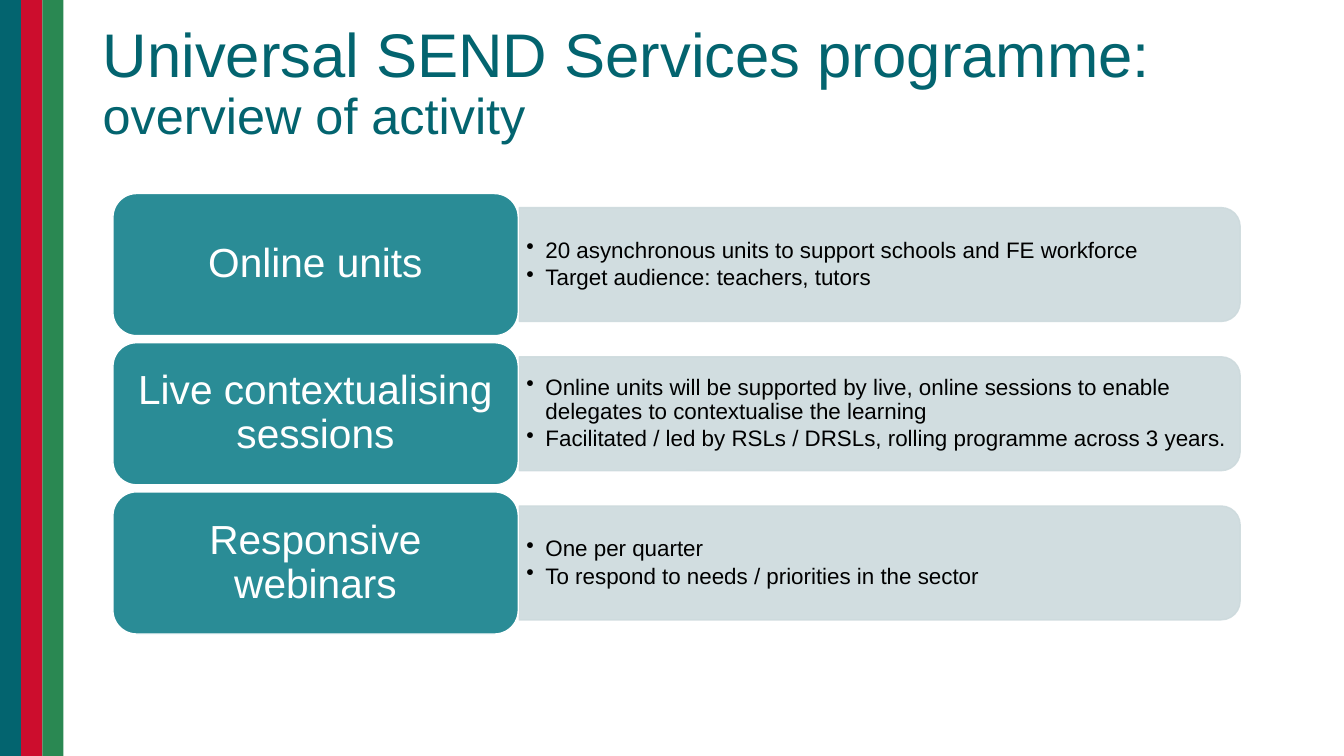
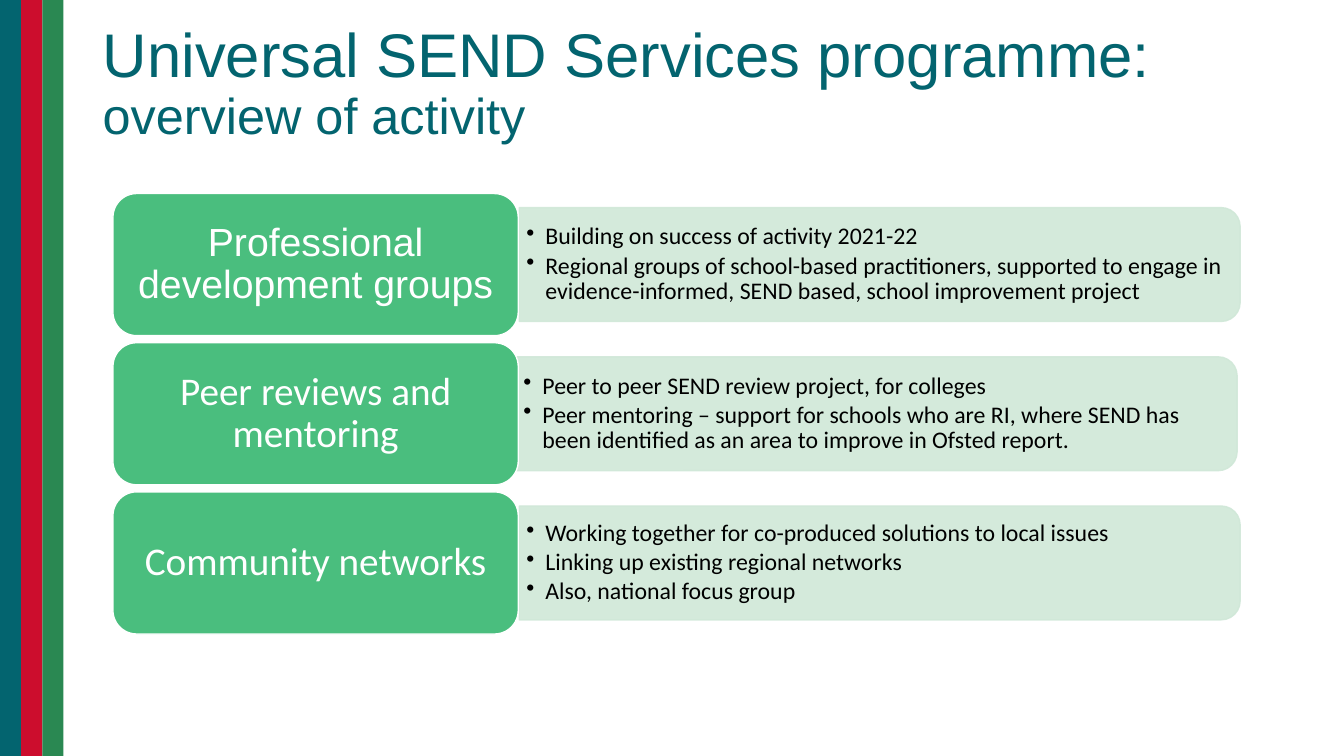
import pptx
import pptx.dml.color
import pptx.enum.shapes
import pptx.enum.text
import pptx.oxml
import pptx.oxml.ns
import pptx.util
from pptx.util import Inches

SHAPE = pptx.enum.shapes.MSO_SHAPE
ALIGN = pptx.enum.text.PP_ALIGN
MIDDLE = pptx.enum.text.MSO_ANCHOR.MIDDLE

# Shared look
TEAL, RED, GREEN = "03646F", "CC0D2D", "2A8852"
WHITE, BLACK = "FFFFFF", "000000"
WIDE, HIGH, STRIPE = 13.33, 7.5, 0.21

# Grid of rows
LEFT, TOP, PITCH = 1.12, 1.92, 1.48
LABEL_W, LABEL_H = 4.02, 1.41
PANEL_X, PANEL_W, PANEL_H = 5.15, 7.15, 1.13
TEXT_W, TEXT_H = 7.1, 1.02
INDENT = 0.19


def color(code):
    return pptx.dml.color.RGBColor.from_string(code)


def fade(shape, percent):
    """Make the fill and line colours of a shape partly clear."""
    for tone in shape._element.spPr.iter(pptx.oxml.ns.qn("a:srgbClr")):
        alpha = pptx.oxml.parse_xml(
            f'<a:alpha {pptx.oxml.ns.nsdecls("a")} val="{percent * 1000}"/>')
        tone.append(alpha)


def add_box(slide, kind, x, y, w, h, fill, line=None):
    box = slide.shapes.add_shape(kind, Inches(x), Inches(y), Inches(w), Inches(h))
    box.shadow.inherit = False
    box.fill.solid()
    box.fill.fore_color.rgb = color(fill)
    if line:
        box.line.color.rgb = color(line)
        box.line.width = pptx.util.Pt(1)
    else:
        box.line.fill.background()
    return box


def add_text(slide, x, y, w, h):
    return slide.shapes.add_textbox(Inches(x), Inches(y), Inches(w), Inches(h))


def set_frame(shape, side, edge):
    frame = shape.text_frame
    frame.word_wrap = True
    frame.vertical_anchor = MIDDLE
    frame.margin_left = frame.margin_right = Inches(side)
    frame.margin_top = frame.margin_bottom = Inches(edge)
    return frame


def add_run(para, text, size, font, tone):
    run = para.add_run()
    run.text = text
    run.font.size = pptx.util.Pt(size)
    run.font.name = font
    run.font.color.rgb = color(tone)


def set_bullet(para):
    props = para._p.get_or_add_pPr()
    props.set("marL", str(Inches(INDENT)))
    props.set("indent", str(-Inches(INDENT)))
    props.append(pptx.oxml.parse_xml(
        f'<a:buChar {pptx.oxml.ns.nsdecls("a")} char="•"/>'))


def add_frame(slide):
    """Side stripes and title, the same on every slide."""
    for i, tone in enumerate((TEAL, RED, GREEN)):
        add_box(slide, SHAPE.RECTANGLE, i * STRIPE, 0, STRIPE, HIGH, tone)
    title = set_frame(add_text(slide, 0.92, 0.12, 11.5, 1.45), 0.1, 0.05)
    para = title.paragraphs[0]
    para.line_spacing = 0.9
    add_run(para, "Universal SEND Services programme: ", 44, "Arial", TEAL)
    add_run(para, "overview of activity", 36, "Arial", TEAL)


def add_panel(slide, x, mid, fill, points, size, font):
    """Bulleted panel, rounded on its right side, centred on mid."""
    panel = add_box(slide, SHAPE.ROUND_2_SAME_RECTANGLE,
                    x + (PANEL_W - PANEL_H) / 2, mid - PANEL_W / 2,
                    PANEL_H, PANEL_W, fill, fill)
    panel.rotation = 90
    fade(panel, 90)
    frame = set_frame(add_text(slide, x, mid - TEXT_H / 2, TEXT_W, TEXT_H),
                      0.07, 0.03)
    for i, point in enumerate(points):
        para = frame.add_paragraph() if i else frame.paragraphs[0]
        set_bullet(para)
        para.line_spacing = 0.9
        para.space_after = pptx.util.Pt(2.5)
        add_run(para, point, size, font, BLACK)


def add_label(slide, y, fill, text, size, font):
    label = add_box(slide, SHAPE.ROUNDED_RECTANGLE, LEFT, y,
                    LABEL_W, LABEL_H, fill, WHITE)
    para = set_frame(label, 0.12, 0.06).paragraphs[0]
    para.alignment = ALIGN.CENTER
    para.line_spacing = 0.9
    add_run(para, text, size, font, WHITE)


# Each slide: label and panel fills, label size, point size and font, rows.
# Each row: label, label font, panel left, points.
DECK = [
    ("2A8C96", "CDDADD", 29, 16, "Arial", [
        ("Online units", "Arial", PANEL_X, [
            "20 asynchronous units to support schools and FE workforce",
            "Target audience: teachers, tutors"]),
        ("Live contextualising sessions", "Arial", PANEL_X, [
            "Online units will be supported by live, online sessions to enable "
            "delegates to contextualise the learning",
            "Facilitated / led by RSLs / DRSLs, rolling programme across 3 years."]),
        ("Responsive webinars", "Arial", PANEL_X, [
            "One per quarter",
            "To respond to needs / priorities in the sector"]),
    ]),
    ("4ABE7E", "D0E8D8", 28, 17, "Calibri", [
        ("Professional development groups", "Arial", PANEL_X, [
            "Building on success of activity 2021-22",
            "Regional groups of school-based practitioners, supported to engage in "
            "evidence-informed, SEND based, school improvement project"]),
        ("Peer reviews and mentoring", "Calibri", PANEL_X - 0.03, [
            "Peer to peer SEND review project, for colleges",
            "Peer mentoring – support for schools who are RI, where SEND has "
            "been identified as an area to improve in Ofsted report."]),
        ("Community networks", "Calibri", PANEL_X, [
            "Working together for co-produced solutions to local issues",
            "Linking up existing regional networks",
            "Also, national focus group"]),
    ]),
]


def main():
    deck = pptx.Presentation()
    deck.slide_width, deck.slide_height = Inches(WIDE), Inches(HIGH)
    for dark, pale, big, small, font, rows in DECK:
        slide = deck.slides.add_slide(deck.slide_layouts[6])
        add_frame(slide)
        for i, (name, face, x, points) in enumerate(rows):
            y = TOP + i * PITCH
            add_panel(slide, x, y + LABEL_H / 2, pale, points, small, font)
            add_label(slide, y, dark, name, big, face)
    deck.save("out.pptx")


if __name__ == "__main__":
    main()
